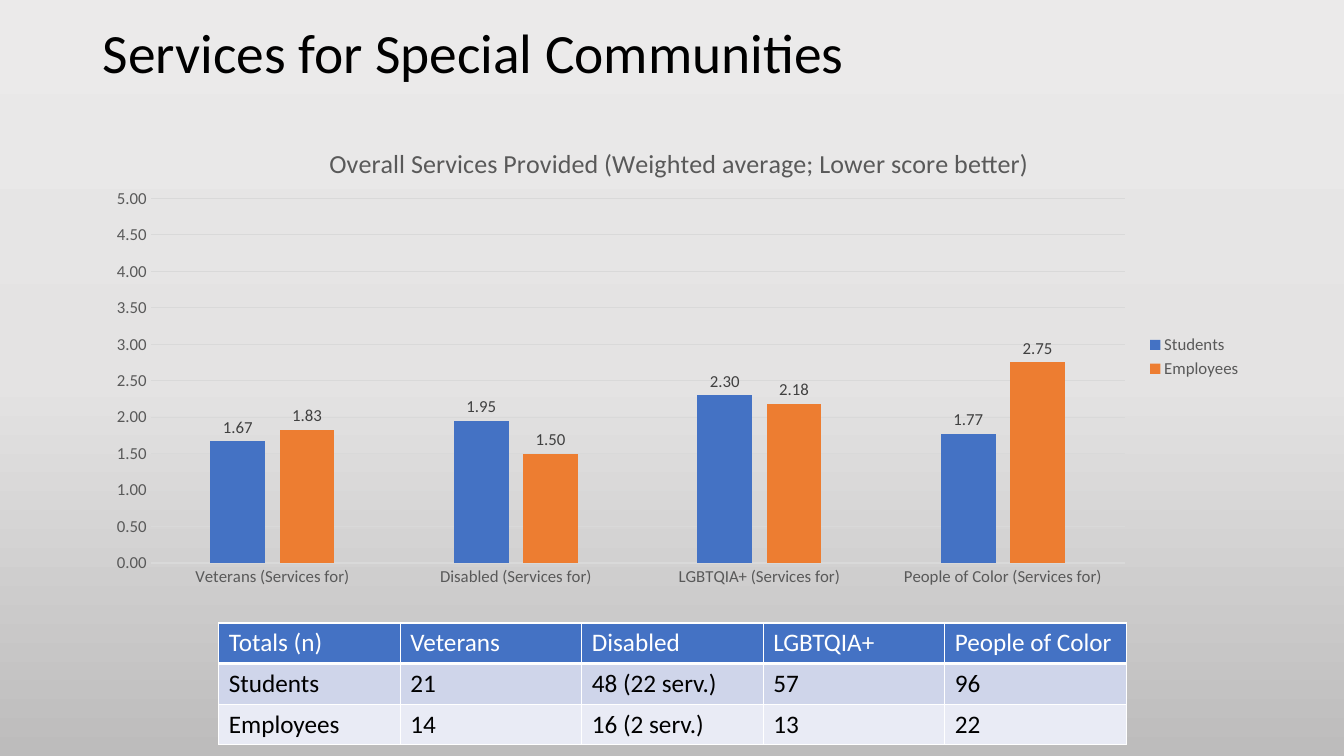
from copy import deepcopy

from lxml.etree import SubElement
from pptx import Presentation
from pptx.chart.data import CategoryChartData
from pptx.dml.color import RGBColor
from pptx.enum.chart import XL_CHART_TYPE, XL_LABEL_POSITION, XL_LEGEND_POSITION, XL_TICK_MARK
from pptx.enum.text import MSO_ANCHOR
from pptx.oxml import parse_xml
from pptx.oxml.ns import nsdecls, qn
from pptx.util import Inches, Pt


def rgb(color):
    return RGBColor.from_string(color)


class SlideBuilder:
    """Holds the text style and the current slide, and adds elements to it."""

    font = "Calibri"
    black, white, gray, dark, grid = "000000", "FFFFFF", "595959", "404040", "D9D9D9"
    blue, orange = "4472C4", "ED7D31"
    bands = ("CFD5EA", "E9EBF5")

    def __init__(self, prs):
        self.s = prs.slides.add_slide(prs.slide_layouts[6])

    def style(self, font, size, color):
        font.name, font.size, font.bold = self.font, Pt(size), False
        font.color.rgb = rgb(color)

    def run(self, p, text, size, color):
        r = p.add_run()
        r.text = text
        self.style(r.font, size, color)

    def background(self, colors):
        fill = self.s.background.fill
        fill.gradient()
        fill.gradient_angle = 270
        stop_list = self.s.element.xpath(".//a:gsLst")[0]
        stop_list.insert(1, deepcopy(stop_list[0]))
        for i, (stop, color) in enumerate(zip(fill.gradient_stops, colors)):
            stop.position = i / (len(colors) - 1)
            stop.color.rgb = rgb(color)

    def title(self, text, x, y, w, h):
        tf = self.s.shapes.add_textbox(Inches(x), Inches(y), Inches(w), Inches(h)).text_frame
        tf.word_wrap = True
        tf.vertical_anchor = MSO_ANCHOR.MIDDLE
        p = tf.paragraphs[0]
        p.line_spacing = 0.9
        self.run(p, text, 39.6, self.black)

    def layout(self, parent, **values):
        for old in parent.findall(qn("c:layout")):
            parent.remove(old)
        layout = parse_xml(f"<c:layout {nsdecls('c')}/>")
        manual = SubElement(layout, qn("c:manualLayout"))
        for name, value in values.items():
            SubElement(manual, qn(f"c:{name}")).set("val", str(value))
        parent.insert(1 if parent.find(qn("c:tx")) is not None else 0, layout)

    def axis(self, axis):
        axis.major_tick_mark = axis.minor_tick_mark = XL_TICK_MARK.NONE
        self.style(axis.tick_labels.font, 12, self.gray)

    def line(self, line):
        line.color.rgb = rgb(self.grid)
        line.width = Pt(0.75)

    def chart(self, title, categories, series, x, y, w, h):
        data = CategoryChartData(number_format="0.00")
        data.categories = categories
        for name, values in series.items():
            data.add_series(name, values)
        chart = self.s.shapes.add_chart(
            XL_CHART_TYPE.COLUMN_CLUSTERED, Inches(x), Inches(y), Inches(w), Inches(h), data
        ).chart
        self.style(chart.font, 10, self.black)
        self.run(chart.chart_title.text_frame.paragraphs[0], title, 18.6, self.gray)
        chart.chart_title.include_in_layout = False

        cat, val = chart.category_axis, chart.value_axis
        for axis in (cat, val):
            self.axis(axis)
        self.line(cat.format.line)
        self.line(val.major_gridlines.format.line)
        val.format.line.fill.background()
        val.minimum_scale, val.maximum_scale, val.major_unit = 0, 5, 0.5
        val.tick_labels.number_format = "0.00"
        val.tick_labels.number_format_is_linked = False

        chart.has_legend = True
        chart.legend.position = XL_LEGEND_POSITION.RIGHT
        chart.legend.include_in_layout = False
        self.style(chart.legend.font, 12, self.gray)

        plot = chart.plots[0]
        plot.gap_width, plot.overlap, plot.vary_by_categories = 219, -27, False
        for ser, color in zip(plot.series, (self.blue, self.orange)):
            ser.format.fill.solid()
            ser.format.fill.fore_color.rgb = rgb(color)
            labels = ser.data_labels
            labels.show_value = True
            labels.position = XL_LABEL_POSITION.OUTSIDE_END
            labels.number_format, labels.number_format_is_linked = "0.00", False
            self.style(labels.font, 12, self.dark)

        root = chart.element
        self.layout(root.xpath("c:chart/c:title")[0], xMode="edge", yMode="edge", x=0.2, y=0.05)
        self.layout(root.xpath("c:chart/c:plotArea")[0], layoutTarget="inner",
                    xMode="edge", yMode="edge", x=0.05, y=0.17, w=0.84, h=0.76)

    def borders(self, cell, bottom):
        tc_pr = cell._tc.get_or_add_tcPr()
        for i, (side, width) in enumerate(zip("LRTB", (1, 1, 1, bottom))):
            tc_pr.insert(i, parse_xml(
                f'<a:ln{side} {nsdecls("a")} w="{Pt(width)}"><a:solidFill>'
                f'<a:srgbClr val="{self.white}"/></a:solidFill></a:ln{side}>'
            ))

    def table(self, rows, x, y, w, h):
        table = self.s.shapes.add_table(
            len(rows), len(rows[0]), Inches(x), Inches(y), Inches(w), Inches(h)
        ).table
        for i, (row, fill) in enumerate(zip(rows, (self.blue, *self.bands))):
            for j, text in enumerate(row):
                cell = table.cell(i, j)
                cell.fill.solid()
                cell.fill.fore_color.rgb = rgb(fill)
                self.borders(cell, 1 if i else 3)
                self.run(cell.text_frame.paragraphs[0], text, 18, self.black if i else self.white)


def main():
    prs = Presentation()
    prs.slide_width, prs.slide_height = Inches(13.33), Inches(7.5)
    slide = SlideBuilder(prs)
    slide.background(("EBEAEA", "E4E3E3", "BDBCBC"))
    slide.title("Services for Special Communities", 0.92, 0.22, 11.5, 0.67)
    groups = ("Veterans", "Disabled", "LGBTQIA+", "People of Color")
    slide.chart(
        "Overall Services Provided (Weighted average; Lower score better)",
        [f"{group} (Services for)" for group in groups],
        {"Students": (1.67, 1.95, 2.30, 1.77), "Employees": (1.83, 1.50, 2.18, 2.75)},
        0.92, 1.16, 11.5, 4.76,
    )
    slide.table(
        (
            ("Totals (n)", *groups),
            ("Students", "21", "48 (22 serv.)", "57", "96"),
            ("Employees", "14", "16 (2 serv.)", "13", "22"),
        ),
        2.17, 6.18, 9, 1.21,
    )
    prs.save("out.pptx")


if __name__ == "__main__":
    main()
